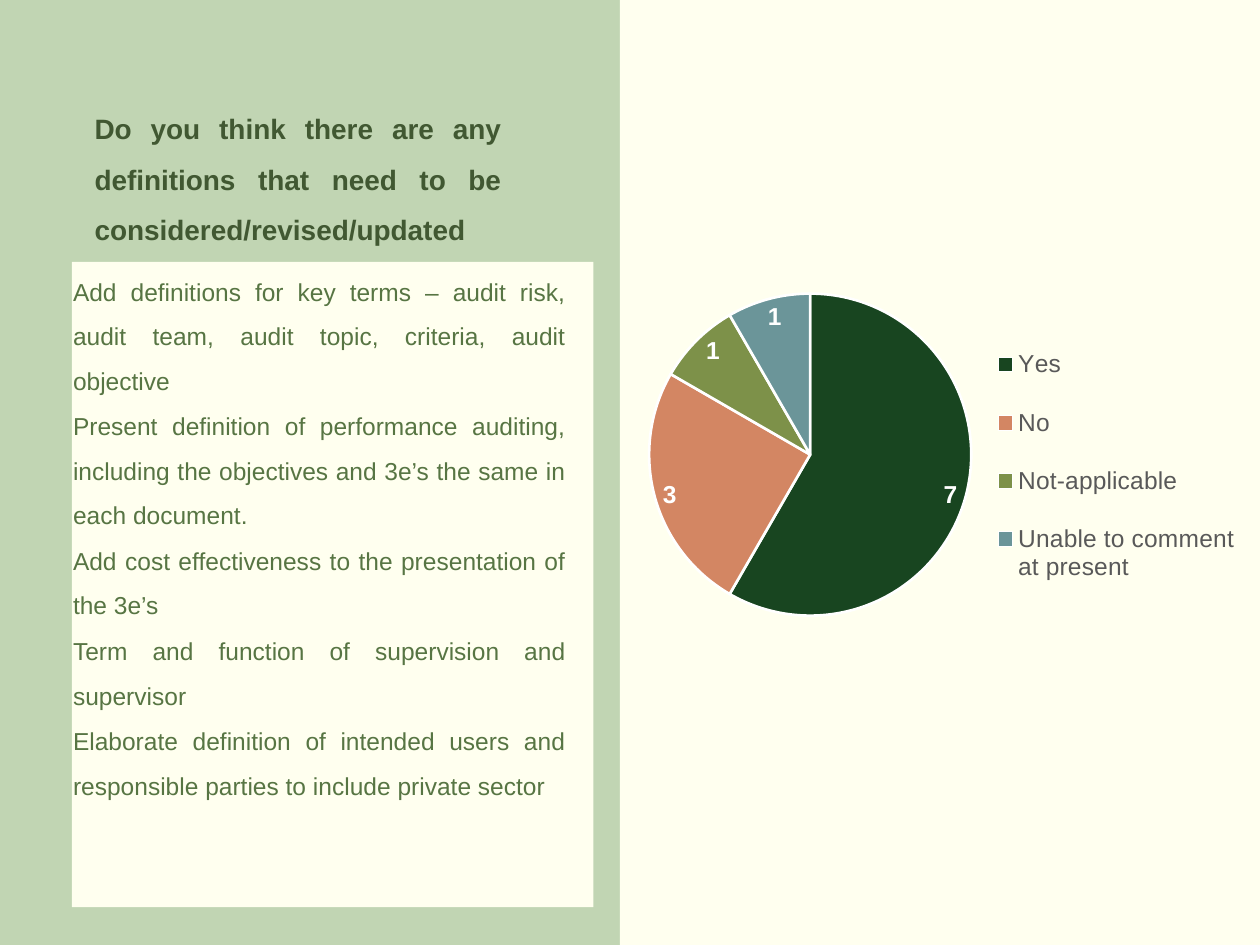
from lxml import etree
from pptx import Presentation
from pptx import util as u
from pptx.chart.data import CategoryChartData
from pptx.dml.color import RGBColor
from pptx.enum import chart as ch, shapes, text
from pptx.oxml import ns

WIDE, HIGH = 10, 7.5
SAGE = RGBColor(0xC1, 0xD5, 0xB3)
CREAM = RGBColor(0xFF, 0xFF, 0xEF)
DARK = RGBColor(0x41, 0x58, 0x32)
MOSS = RGBColor(0x57, 0x75, 0x43)
GREY = RGBColor(0x59, 0x59, 0x59)
WHITE = RGBColor(0xFF, 0xFF, 0xFF)
SLICES = [
    ("Yes", 7, RGBColor(0x18, 0x45, 0x20)),
    ("No", 3, RGBColor(0xD3, 0x86, 0x63)),
    ("Not-applicable", 1, RGBColor(0x7D, 0x91, 0x49)),
    ("Unable to comment at present", 1, RGBColor(0x6B, 0x95, 0x99)),
]
TITLE = "Do you think there are any definitions that need to be considered/revised/updated"
POINTS = [
    "Add definitions for key terms – audit risk, audit team, audit topic, criteria, audit objective",
    "Present definition of performance auditing, including the objectives and 3e’s the same in each document.",
    "Add cost effectiveness to the presentation of the 3e’s",
    "Term and function of supervision and supervisor",
    "Elaborate definition of intended users and responsible parties to include private sector",
]


def share(x, y, w, h):
    return [u.Inches(v * s) for v, s in zip((x, y, w, h), (WIDE, HIGH) * 2)]


def style(font, size, color, bold=False):
    font.name, font.size, font.bold = "Arial", u.Pt(size), bold
    font.color.rgb = color


def write(frame, lines, size, color, bold=False):
    frame.word_wrap = True
    frame.auto_size = text.MSO_AUTO_SIZE.NONE
    frame.vertical_anchor = text.MSO_ANCHOR.TOP
    frame.margin_top = frame.margin_bottom = 0
    frame.margin_left, frame.margin_right = u.Inches(0.01), u.Inches(0.22)
    frame.text = "\n".join(lines)
    for para in frame.paragraphs:
        para.alignment = text.PP_ALIGN.JUSTIFY
        para.line_spacing = 1.51
        para.space_before = u.Pt(0.8)
        style(para.font, size, color, bold)


def panel(slide, box):
    rect = slide.shapes.add_shape(shapes.MSO_SHAPE.RECTANGLE, *share(*box))
    rect.shadow.inherit = False
    rect.fill.solid()
    rect.fill.fore_color.rgb = CREAM
    rect.line.fill.background()
    return rect


def head(slide, box):
    title = slide.shapes.title
    title.left, title.top, title.width, title.height = share(*box)
    write(title.text_frame, [TITLE], 16, DARK, True)


def place(part, box, inner=False):
    layout = part.find(ns.qn("c:layout"))
    if layout is None:
        layout = etree.Element(ns.qn("c:layout"))
        at = 1 if part.tag == ns.qn("c:legend") else 0
        part.insert(at, layout)
    for child in list(layout):
        layout.remove(child)
    manual = etree.SubElement(layout, ns.qn("c:manualLayout"))
    rules = [("layoutTarget", "inner")] if inner else []
    rules += [("xMode", "edge"), ("yMode", "edge")]
    rules += zip("xywh", box)
    for name, val in rules:
        etree.SubElement(manual, ns.qn("c:" + name)).set("val", str(val))


def pie(slide, box):
    data = CategoryChartData()
    data.categories = [name for name, _, _ in SLICES]
    data.add_series("Series 1", [val for _, val, _ in SLICES])
    chart = slide.shapes.add_chart(ch.XL_CHART_TYPE.PIE, *share(*box), data).chart
    chart.has_title = False
    chart.font.name, chart.font.size = "Arial", u.Pt(10)
    plot = chart.plots[0]
    plot.vary_by_categories = True
    for i, (_, _, color) in enumerate(SLICES):
        form = plot.series[0].points[i].format
        form.fill.solid()
        form.fill.fore_color.rgb = color
        form.line.color.rgb = WHITE
        form.line.width = u.Pt(1.5)
    plot.has_data_labels = True
    labels = plot.data_labels
    labels.show_value = True
    labels.show_percentage = False
    labels.position = ch.XL_LABEL_POSITION.BEST_FIT
    style(labels.font, 14, WHITE, True)
    chart.has_legend = True
    legend = chart.legend
    legend.position = ch.XL_LEGEND_POSITION.BOTTOM
    legend.include_in_layout = False
    style(legend.font, 14, GREY)
    area = chart.element.find(".//" + ns.qn("c:plotArea"))
    place(area, (0.07, 0.1, 0.43, 0.73), True)
    place(chart.element.find(".//" + ns.qn("c:legend")), (0.52, 0.16, 0.34, 0.66))


def main():
    deck = Presentation()
    deck.slide_width, deck.slide_height = u.Inches(WIDE), u.Inches(HIGH)
    slide = deck.slides.add_slide(deck.slide_layouts[5])
    slide.background.fill.solid()
    slide.background.fill.fore_color.rgb = SAGE
    head(slide, (0.074, 0.1, 0.346, 0.163))
    body = panel(slide, (0.057, 0.277, 0.414, 0.683))
    write(body.text_frame, POINTS, 14, MOSS)
    panel(slide, (0.492, 0, 0.513, 1))
    pie(slide, (0.472, 0.264, 0.6, 0.467))
    deck.save("out.pptx")


if __name__ == "__main__":
    main()
